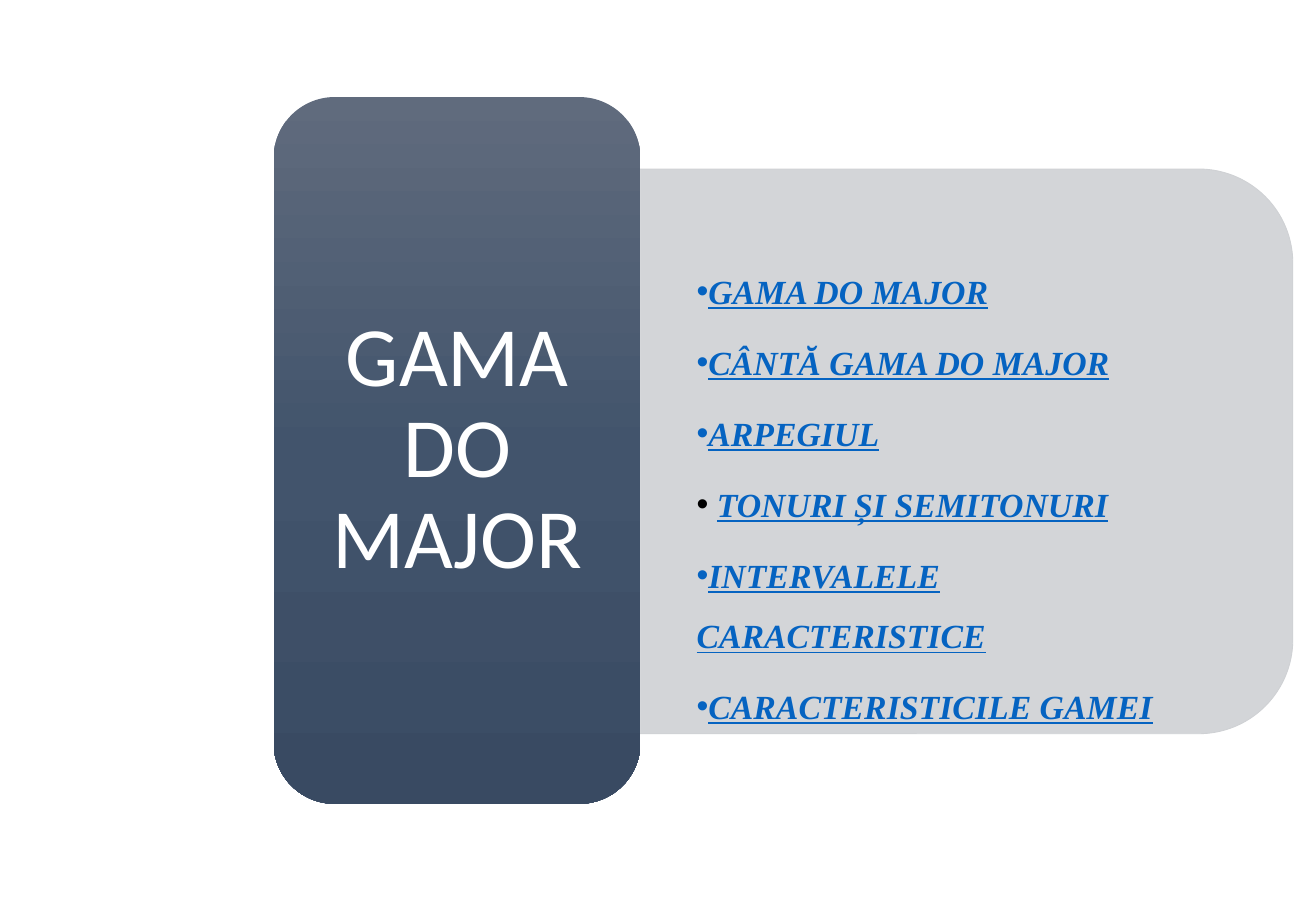
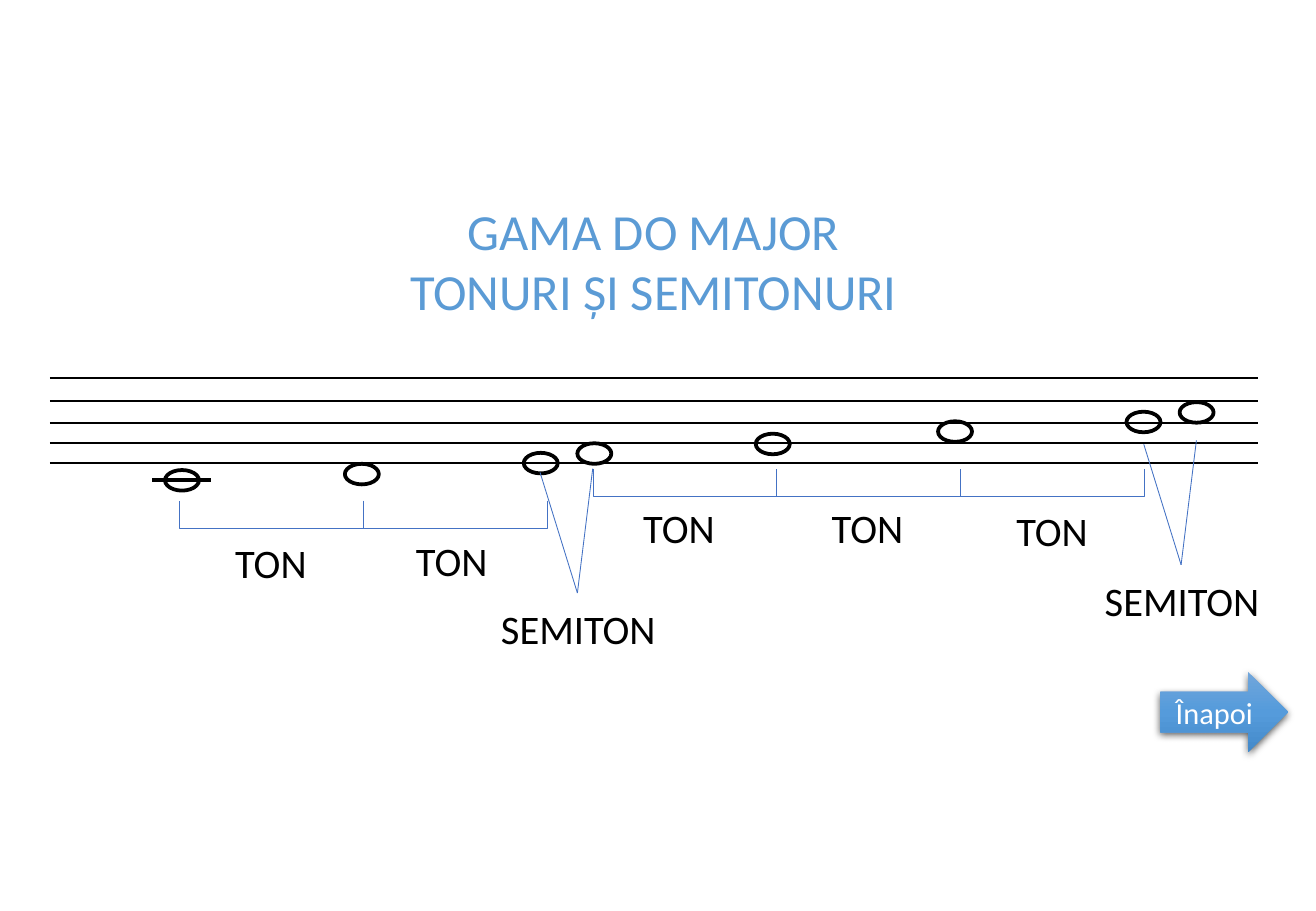
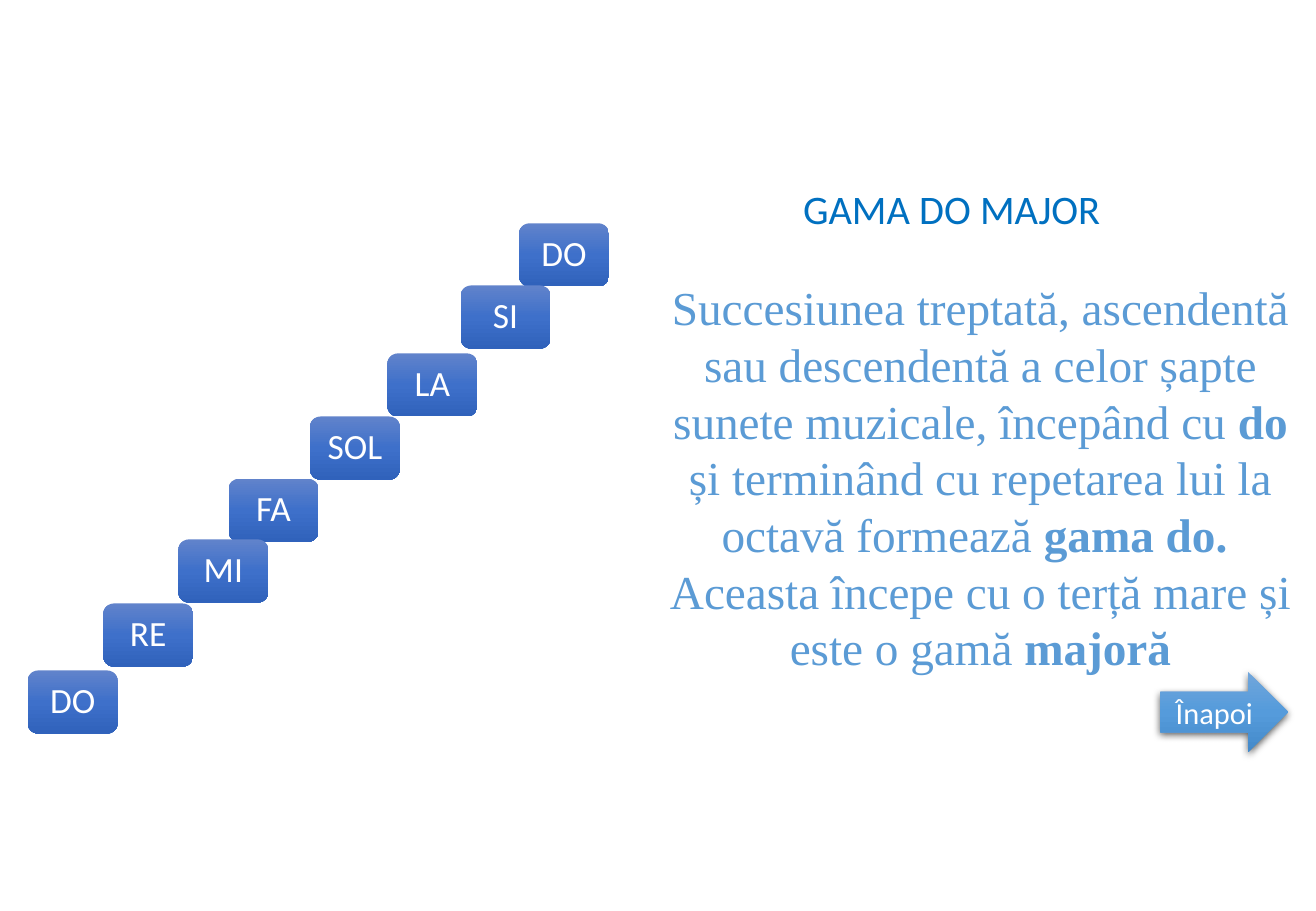
from copy import deepcopy
from lxml.etree import SubElement
from pptx import Presentation
from pptx.dml.color import RGBColor
from pptx.enum.shapes import MSO_CONNECTOR as Connector, MSO_SHAPE as Preset
from pptx.enum.text import MSO_ANCHOR as Anchor, MSO_AUTO_SIZE as AutoSize, PP_ALIGN as Align
from pptx.oxml.ns import qn
from pptx.util import Cm, Pt

WHITE = RGBColor(0xFF, 0xFF, 0xFF)
BLACK = RGBColor(0x00, 0x00, 0x00)
LINK = RGBColor(0x05, 0x63, 0xC1)
SKY = RGBColor(0x5B, 0x9B, 0xD5)
HEADING = RGBColor(0x00, 0x70, 0xC0)
BRACKET = RGBColor(0x44, 0x72, 0xC4)
PANEL = RGBColor(0xCF, 0xD1, 0xD4)
SLATE = (RGBColor(0x60, 0x6B, 0x7D), RGBColor(0x42, 0x54, 0x6C), RGBColor(0x39, 0x4A, 0x62))
TILE = (RGBColor(0x61, 0x83, 0xCB), RGBColor(0x3E, 0x70, 0xCA), RGBColor(0x30, 0x62, 0xBB))
ARROW = (RGBColor(0x71, 0xA6, 0xDB), RGBColor(0x55, 0x9B, 0xDB), RGBColor(0x44, 0x8A, 0xCA))
SANS = "Calibri"
SERIF = "Times New Roman"


def write(box, lines, *, size, color, font=SANS, align=Align.CENTER, anchor=Anchor.TOP,
          wrap=True, insets=(0.25, 0.13), spacing=1.0, after=0, bullet=None, margin=0,
          italic=False, underline=False):
    frame = box.text_frame
    frame.word_wrap = wrap
    frame.auto_size = AutoSize.NONE
    frame.vertical_anchor = anchor
    frame.margin_left = frame.margin_right = Cm(insets[0])
    frame.margin_top = frame.margin_bottom = Cm(insets[1])
    for index, line in enumerate(lines):
        para = frame.add_paragraph() if index else frame.paragraphs[0]
        properties = para._p.get_or_add_pPr()
        properties.set("marL", str(Cm(margin)))
        properties.set("indent", "0")
        if bullet:
            SubElement(properties, qn("a:buChar")).set("char", bullet)
        else:
            SubElement(properties, qn("a:buNone"))
        para.alignment = align
        para.line_spacing = spacing
        para.space_before = Pt(0)
        para.space_after = Pt(after)
        for text, changes in [(line, {})] if isinstance(line, str) else line:
            span = para.add_run()
            span.text = text
            span.font.name = font
            span.font.size = Pt(size)
            span.font.bold = changes.get("bold", False)
            span.font.italic = italic
            span.font.underline = changes.get("underline", underline)
            span.font.color.rgb = changes.get("color", color)


class Lesson:
    def __init__(self):
        self.deck = Presentation()
        self.deck.slide_width = Cm(27.51)
        self.deck.slide_height = Cm(19.05)
        self.page = None

    def new_page(self, layout):
        self.page = self.deck.slides.add_slide(self.deck.slide_layouts[layout])

    def placeholder(self, index, area, lines, **style):
        box = self.page.placeholders[index]
        box.left, box.top, box.width, box.height = map(Cm, area)
        box.element.getparent().append(box.element)
        write(box, lines, **style)

    def title(self, area, lines, **style):
        self.placeholder(0, area, lines, **style)

    def body(self, area, lines, **style):
        self.placeholder(1, area, lines, **style)

    def shape(self, preset, area, *, fill=None, line=None, width=0.5, turn=0):
        box = self.page.shapes.add_shape(preset, *map(Cm, area))
        box.shadow.inherit = False
        box.rotation = turn
        if fill is None:
            box.fill.background()
        elif isinstance(fill, RGBColor):
            box.fill.solid()
            box.fill.fore_color.rgb = fill
        else:
            self.gradient(box, fill)
        if line is None:
            box.line.fill.background()
        else:
            box.line.color.rgb = line
            box.line.width = Pt(width)
        return box

    def gradient(self, box, colors):
        box.fill.gradient()
        box.fill.gradient_angle = 270
        stops = box.element.spPr.find(".//" + qn("a:gsLst"))
        stops.append(deepcopy(stops[-1]))
        for stop, position, color in zip(box.fill.gradient_stops, (0, 0.5, 1), colors):
            stop.position = position
            stop.color.rgb = color

    def line(self, start, end, color=BLACK, width=1.25):
        link = self.page.shapes.add_connector(Connector.STRAIGHT, *map(Cm, start + end))
        link.line.color.rgb = color
        link.line.width = Pt(width)
        SubElement(link.element.spPr, qn("a:effectLst"))

    def label(self, text, left, top, width):
        box = self.page.shapes.add_textbox(*map(Cm, (left, top, width, 1.27)))
        write(box, [text], size=24, color=BLACK, wrap=False)

    def panel(self, area):
        box = self.shape(Preset.ROUND_2_SAME_RECTANGLE, area, fill=PANEL, line=PANEL, turn=90)
        color = box.element.spPr.find(".//" + qn("a:srgbClr"))
        SubElement(color, qn("a:alpha")).set("val", "90000")

    def note(self, left, top):
        self.shape(Preset.OVAL, (left, top, 0.71, 0.43), line=BLACK, width=2.25)

    def tone(self, start, middle, label_left, label_top):
        depth, span = 0.58, 3.84
        area = (start + (span - depth) / 2, middle - span / 2, depth, span)
        bracket = self.shape(Preset.LEFT_BRACKET, area, line=BRACKET, turn=270)
        bracket.adjustments[0] = 0
        self.label("TON", label_left, label_top, 2.03)

    def semitone(self, left, top):
        for across, rise in ((-0.78, 2.52), (0.32, 2.6)):
            self.line((left + across, top - rise), (left, top), BRACKET, 0.5)
        self.label("SEMITON", left - 1.87, top + 0.1, 3.78)

    def tile(self, name, left, top):
        box = self.shape(Preset.ROUNDED_RECTANGLE, (left, top, 1.88, 1.32), fill=TILE)
        write(box, [name], size=21, color=WHITE, anchor=Anchor.MIDDLE,
              insets=(0.15, 0.15), spacing=0.9)

    def back_arrow(self):
        box = self.shape(Preset.RIGHT_ARROW, (24.26, 14.05, 2.67, 1.68), fill=ARROW)
        effects = box.element.spPr.find(qn("a:effectLst"))
        shadow = SubElement(effects, qn("a:outerShdw"), blurRad=str(Pt(4.5)),
                            dist=str(Pt(1.5)), dir="5400000", algn="ctr", rotWithShape="0")
        color = SubElement(shadow, qn("a:srgbClr"), val="000000")
        SubElement(color, qn("a:alpha"), val="63000")
        write(box, ["Înapoi"], size=18, color=WHITE, anchor=Anchor.MIDDLE)


def contents_page(lesson):
    lesson.new_page(1)
    lesson.panel((14.3, 2.62, 11.81, 13.64))
    topics = [
        "GAMA DO MAJOR",
        "CÂNTĂ GAMA DO MAJOR",
        "ARPEGIUL",
        "TONURI ȘI SEMITONURI",
        "INTERVALELE CARACTERISTICE",
        "CARACTERISTICILE GAMEI",
    ]
    lines = [[(topic, {"bold": True})] for topic in topics]
    lines[3].insert(0, (" ", {"color": BLACK, "underline": False}))
    lesson.body((13.39, 4.09, 13.08, 11.46), lines, size=20, color=LINK, font=SERIF,
                align=Align.LEFT, anchor=Anchor.BOTTOM, insets=(0.69, 0.36), spacing=1.5,
                after=6, bullet="•", margin=0.48, italic=True, underline=True)
    lesson.shape(Preset.ROUNDED_RECTANGLE, (5.72, 2.03, 7.67, 14.78), fill=SLATE)
    lesson.title((6.1, 2.41, 6.93, 14.02), ["GAMA DO MAJOR"], size=50, color=WHITE,
                 anchor=Anchor.MIDDLE, insets=(0.53, 0.25), spacing=0.9)


def tones_page(lesson):
    lesson.new_page(5)
    lesson.title((1.04, 4.04, 25.25, 2.82), ["GAMA DO MAJOR", "TONURI ȘI SEMITONURI"],
                 size=30, color=SKY)
    for height in (7.9, 8.38, 8.84, 9.27, 9.68):
        lesson.line((1.04, height), (26.29, height))
    for left, top in ((3.45, 9.83), (7.21, 9.7), (10.95, 9.47), (12.07, 9.27),
                      (15.8, 9.07), (19.61, 8.81), (23.55, 8.61), (24.66, 8.41)):
        lesson.note(left, top)
    lesson.line((3.18, 10.03), (4.42, 10.03), width=2.25)
    for start, middle, labels in (
        (3.76, 10.76, ((4.65, 11.13), (8.43, 11.07))),
        (12.4, 10.1, ((13.18, 10.39), (17.12, 10.39), (20.98, 10.46))),
    ):
        for index, (left, top) in enumerate(labels):
            lesson.tone(start + index * 3.84, middle, left, top)
    lesson.semitone(12.07, 12.4)
    lesson.semitone(24.69, 11.81)
    lesson.back_arrow()


def scale_page(lesson):
    lesson.new_page(1)
    for name, left, top in (
        ("DO", 10.85, 4.67), ("SI", 9.63, 5.97), ("LA", 8.1, 7.39), ("SOL", 6.48, 8.71),
        ("FA", 4.78, 10.01), ("MI", 3.73, 11.28), ("RE", 2.16, 12.62), ("DO", 0.58, 14.02),
    ):
        lesson.tile(name, left, top)
    strong = {"bold": True}
    definition = [
        [("Succesiunea treptată, ascendentă sau descendentă a celor șapte sunete muzicale, "
          "începând cu ", {}), ("do", strong),
         (" și terminând cu repetarea lui la octavă formează ", {}), ("gama do. ", strong)],
        [("Aceasta începe cu o terță mare și este o gamă ", {}), ("majoră", strong)],
    ]
    lesson.body((13.46, 5.69, 14.07, 8.64), definition, size=28, color=SKY, font=SERIF)
    lesson.title((13.06, 3.71, 13.67, 1.27), ["GAMA DO MAJOR"], size=24, color=HEADING)
    lesson.back_arrow()


def main():
    lesson = Lesson()
    contents_page(lesson)
    tones_page(lesson)
    scale_page(lesson)
    lesson.deck.save("out.pptx")


if __name__ == "__main__":
    main()
